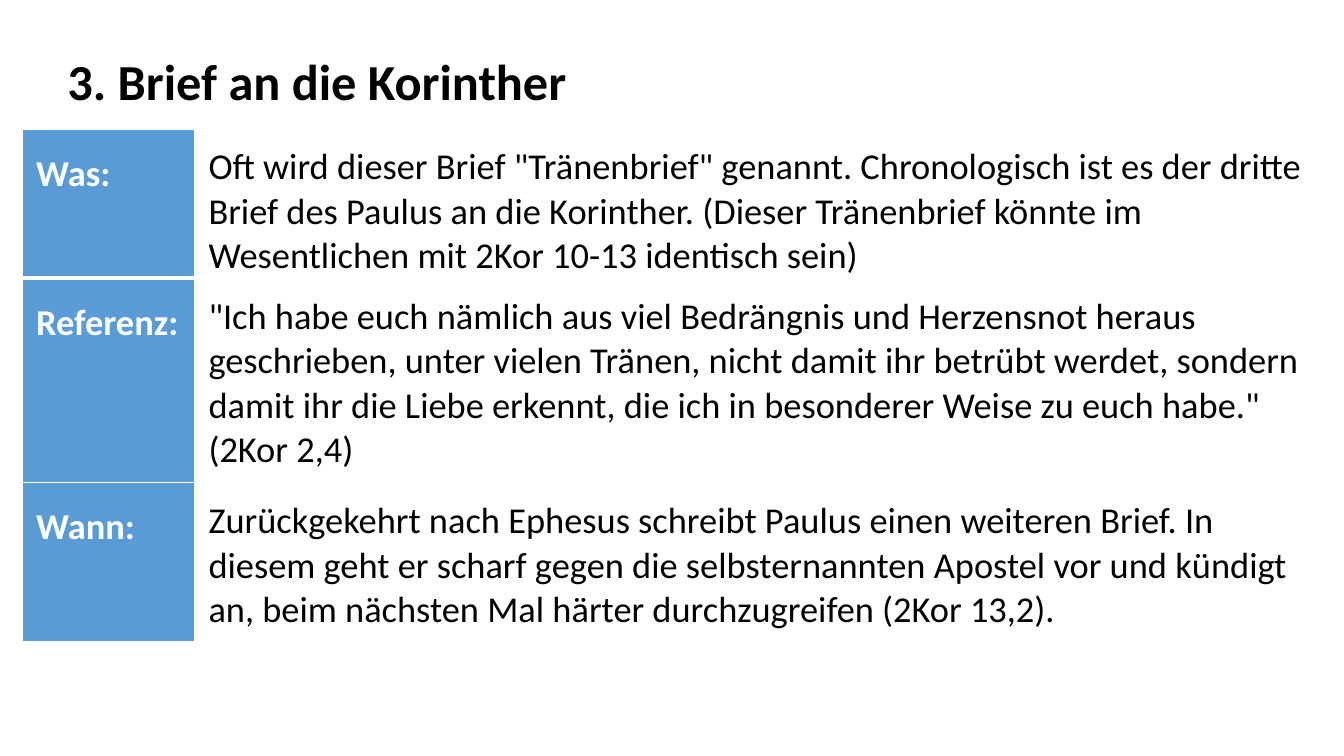
from lxml.etree import SubElement
from pptx import Presentation
from pptx.dml.color import RGBColor
from pptx.oxml.ns import qn
from pptx.util import Pt

TITLE = "3. Brief an die Korinther"
ROWS = [
    ("Was:", 'Oft wird dieser Brief "Tränenbrief" genannt. Chronologisch ist es der dritte '
             "Brief des Paulus an die Korinther. (Dieser Tränenbrief könnte im "
             "Wesentlichen mit 2Kor 10-13 identisch sein)", 106.56),
    ("Referenz:", '"Ich habe euch nämlich aus viel Bedrängnis und Herzensnot heraus '
                  "geschrieben, unter vielen Tränen, nicht damit ihr betrübt werdet, sondern "
                  "damit ihr die Liebe erkennt, die ich in besonderer Weise zu euch "
                  'habe." (2Kor 2,4)', 146.16),
    ("Wann:", "Zurückgekehrt nach Ephesus schreibt Paulus einen weiteren Brief. In "
              "diesem geht er scharf gegen die selbsternannten Apostel vor und kündigt "
              "an, beim nächsten Mal härter durchzugreifen (2Kor 13,2).", 113.76),
]
COLUMNS = (123.12, 804.96)
BLUE, WHITE, BLACK = "5B9BD5", "FFFFFF", "000000"


def color(value):
    return RGBColor.from_string(value)


def style(para, size, ink, bold):
    for span in para.runs:
        span.font.name = "Calibri"
        span.font.size = Pt(size)
        span.font.bold = bold
        span.font.color.rgb = color(ink)


def add_borders(cell, widths):
    """Draw white borders; widths maps the sides L, R, T, B to points."""
    props = cell._tc.get_or_add_tcPr()
    for index, (side, width) in enumerate(widths.items()):
        line = props.makeelement(qn(f"a:ln{side}"), {"w": str(Pt(width))})
        fill = SubElement(line, qn("a:solidFill"))
        SubElement(fill, qn("a:srgbClr"), val=WHITE)
        props.insert(index, line)


def fill_cell(cell, text, fill, ink, bold, top, spacing):
    cell.text = text
    cell.margin_left = cell.margin_right = Pt(10)
    cell.margin_top, cell.margin_bottom = Pt(top), Pt(0)
    cell.fill.solid()
    cell.fill.fore_color.rgb = color(fill)
    para = cell.text_frame.paragraphs[0]
    para.line_spacing = spacing
    style(para, 26, ink, bold)


deck = Presentation()
deck.slide_width, deck.slide_height = Pt(960), Pt(540)
page = deck.slides.add_slide(deck.slide_layouts[6])

title = page.shapes.add_textbox(Pt(41.04), Pt(32.4), Pt(375.12), Pt(51.12))
title.text_frame.word_wrap = False
title.text_frame.text = TITLE
style(title.text_frame.paragraphs[0], 36, BLACK, True)

table = page.shapes.add_table(len(ROWS), len(COLUMNS), Pt(15.84), Pt(92.16),
                              Pt(sum(COLUMNS)), Pt(sum(row[2] for row in ROWS))).table
for column, width in zip(table.columns, COLUMNS):
    column.width = Pt(width)
for index, (label, text, height) in enumerate(ROWS):
    table.rows[index].height = Pt(height)
    label_cell, text_cell = table.rows[index].cells
    fill_cell(label_cell, label, BLUE, WHITE, True, 0, 1.5)
    fill_cell(text_cell, text, WHITE, BLACK, False, 11.5, 1)
    for cell in (label_cell, text_cell):
        add_borders(cell, {"L": 1, "R": 1, "T": 3 if index == 1 else 1,
                           "B": 3 if index == 0 else 1})

deck.save("out.pptx")
